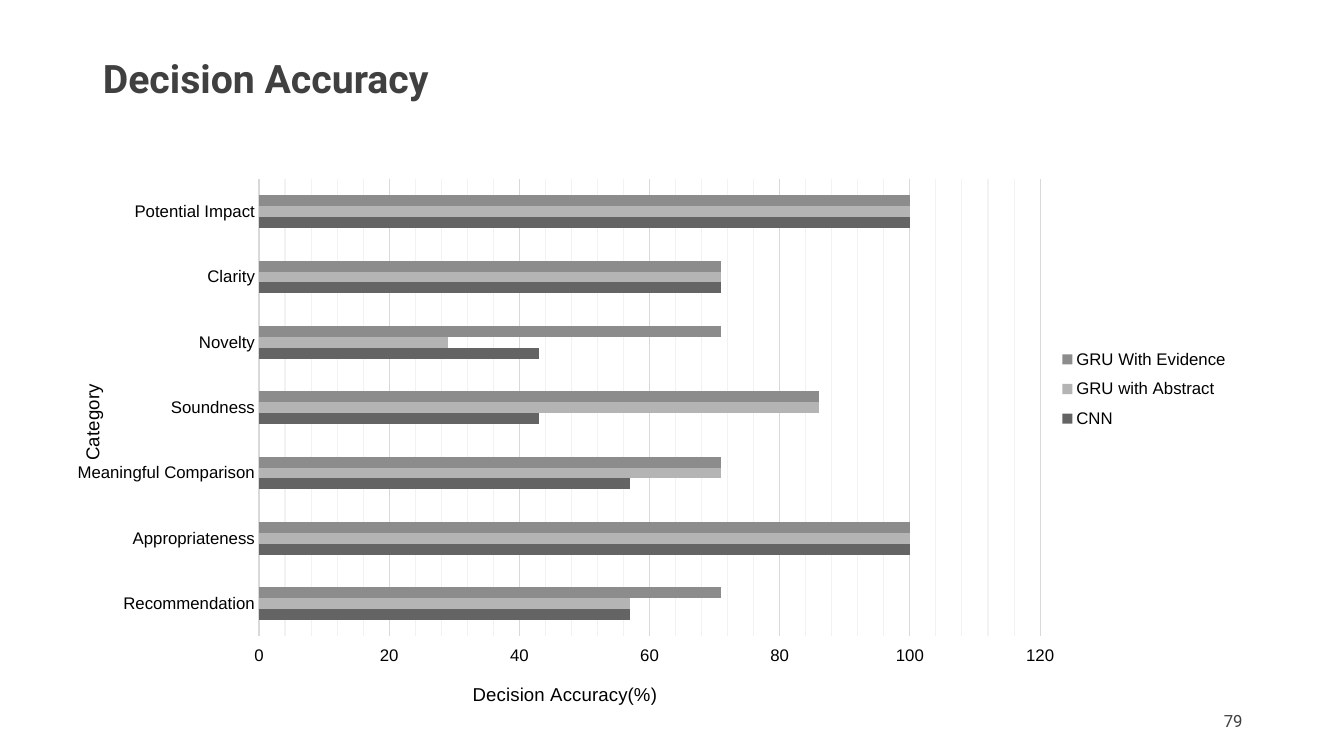
from copy import deepcopy

from lxml import etree
from pptx import Presentation, util as u
from pptx.chart.data import CategoryChartData
from pptx.dml.color import RGBColor
from pptx.enum import chart as ch, text
from pptx.oxml.ns import qn

WIDTH, HEIGHT = 13.33, 7.5
CATEGORIES = ["Recommendation", "Appropriateness", "Meaningful Comparison",
              "Soundness", "Novelty", "Clarity", "Potential Impact"]
SERIES = [
    ("CNN", (57, 100, 57, 43, 43, 71, 100), "646464"),
    ("GRU with Abstract ", (57, 100, 71, 86, 29, 71, 100), "B4B4B4"),
    ("GRU With Evidence", (71, 100, 71, 86, 71, 71, 100), "8C8C8C"),
]


def box(x, y, w, h):
    """Turn shares of the slide's size into left, top, width and height."""
    return (u.Inches(x * WIDTH), u.Inches(y * HEIGHT),
            u.Inches(w * WIDTH), u.Inches(h * HEIGHT))


def style_font(font, size, color, name="Arial", bold=False):
    font.size, font.name, font.bold = u.Pt(size), name, bold
    font.color.rgb = RGBColor.from_string(color)


def style_line(line, color):
    line.color.rgb = RGBColor.from_string(color)
    line.width = u.Pt(0.75)


def write(tf, words, align):
    tf.word_wrap = True
    tf.auto_size = text.MSO_AUTO_SIZE.NONE
    tf.vertical_anchor = text.MSO_ANCHOR.MIDDLE
    p = tf.paragraphs[0]
    p.alignment = align
    r = p.add_run()
    r.text = words
    return p, r.font


def add_title(s, words):
    sp = s.shapes.title
    sp.left, sp.top, sp.width, sp.height = box(0.069, 0.053, 0.863, 0.108)
    p, font = write(sp.text_frame, words, text.PP_ALIGN.LEFT)
    p.line_spacing = 0.9
    style_font(font, 28, "404040", "Roboto", True)


def add_page_number(s, number):
    sp = s.shapes.add_textbox(*box(0.707, 0.927, 0.225, 0.053))
    _, font = write(sp.text_frame, number, text.PP_ALIGN.RIGHT)
    style_font(font, 12, "3F3F3F", "Roboto")


def place(element, index, **shares):
    """Fix a chart part's layout, in shares of the chart's size."""
    for old in element.findall(qn("c:layout")):
        element.remove(old)
    layout = etree.Element(qn("c:layout"))
    manual = etree.SubElement(layout, qn("c:manualLayout"))
    if "Area" in element.tag:
        etree.SubElement(manual, qn("c:layoutTarget")).set("val", "inner")
    for key in ("x", "y"):
        etree.SubElement(manual, qn(f"c:{key}Mode")).set("val", "edge")
    for key, share in shares.items():
        etree.SubElement(manual, qn(f"c:{key}")).set("val", str(share))
    element.insert(index, layout)


def style_axis(axis, title, x, y):
    style_font(axis.tick_labels.font, 12, "000000")
    tf = axis.axis_title.text_frame
    r = tf.paragraphs[0].add_run()
    r.text = title
    style_font(r.font, 13.3, "000000")
    place(axis.axis_title._element, 1, x=x, y=y)
    return tf


def style_gridlines(axis, major_color, minor_color):
    axis.has_major_gridlines = axis.has_minor_gridlines = True
    style_line(axis.major_gridlines.format.line, major_color)
    major = axis._element.find(qn("c:majorGridlines"))
    minor = axis._element.find(qn("c:minorGridlines"))
    minor.append(deepcopy(major.find(qn("c:spPr"))))
    minor.find(".//" + qn("a:srgbClr")).set("val", minor_color)


def add_accuracy_chart(s):
    data = CategoryChartData()
    data.categories = CATEGORIES
    for name, values, _ in SERIES:
        data.add_series(name, values)
    chart = s.shapes.add_chart(ch.XL_CHART_TYPE.BAR_CLUSTERED,
                               *box(0.052, 0.208, 0.874, 0.739), data).chart
    style_font(chart.font, 10, "000000")
    chart.has_title = False

    plot = chart.plots[0]
    plot.gap_width, plot.overlap, plot.vary_by_categories = 300, 0, False
    for series, (_, _, color) in zip(plot.series, SERIES):
        series.format.fill.solid()
        series.format.fill.fore_color.rgb = RGBColor.from_string(color)
    place(chart._chartSpace.find(".//" + qn("c:plotArea")), 0,
          x=0.161, y=0.039, w=0.665, h=0.819)

    cat, val = chart.category_axis, chart.value_axis
    tf = style_axis(cat, "Category", 0.006, 0.4)
    tf._txBody.find(qn("a:bodyPr")).set("rot", "-5400000")
    cat.major_tick_mark = ch.XL_TICK_MARK.NONE
    style_line(cat.format.line, "D9D9D9")

    style_axis(val, "Decision Accuracy(%)", 0.34, 0.935)
    val.minimum_scale, val.maximum_scale = 0, 120
    val.major_unit, val.minor_unit = 20, 4
    style_gridlines(val, "D9D9D9", "F2F2F2")
    val.format.line.fill.background()

    chart.has_legend = True
    legend = chart.legend
    legend.position = ch.XL_LEGEND_POSITION.RIGHT
    legend.include_in_layout = False
    style_font(legend.font, 12, "000000")
    place(legend._element, 1, x=0.837, y=0.325, w=0.155, h=0.18)


def main():
    prs = Presentation()
    prs.slide_width, prs.slide_height = u.Inches(WIDTH), u.Inches(HEIGHT)
    s = prs.slides.add_slide(prs.slide_layouts[5])
    add_title(s, "Decision Accuracy")
    add_page_number(s, "79")
    add_accuracy_chart(s)
    prs.save("out.pptx")


if __name__ == "__main__":
    main()
